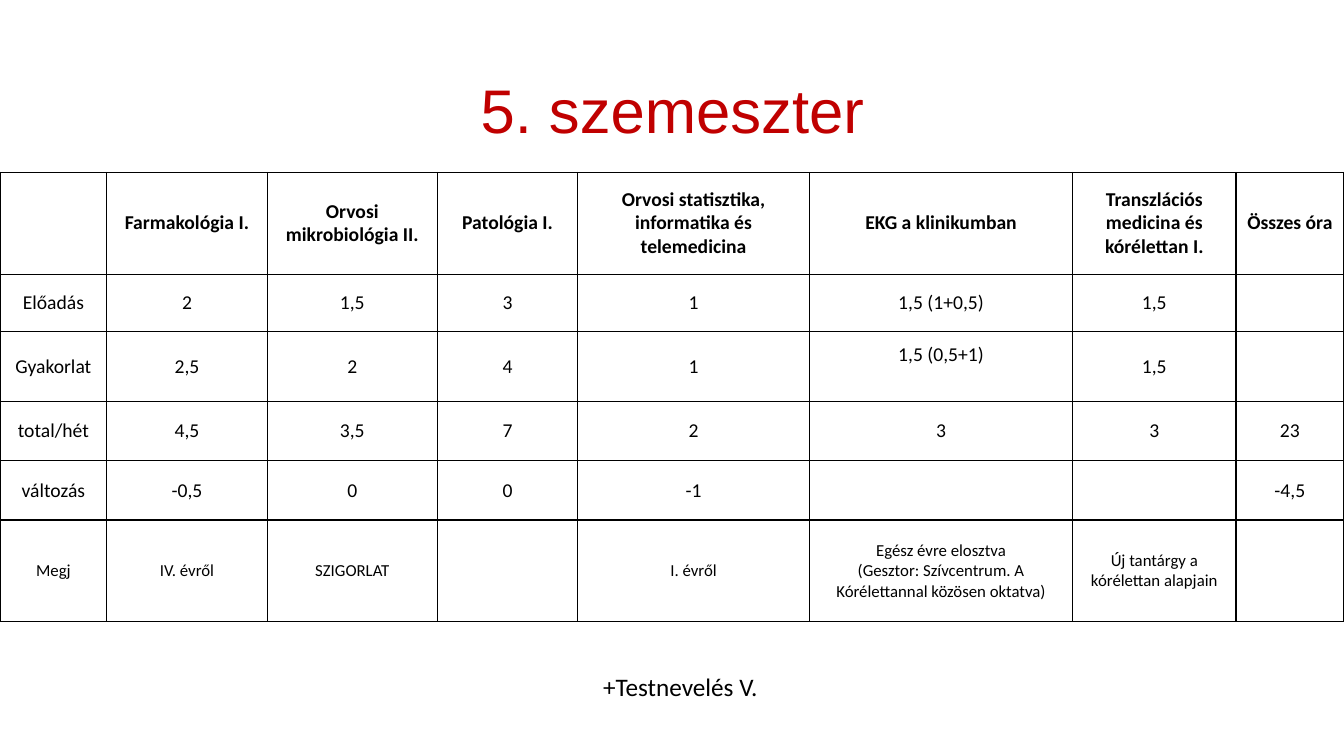
from lxml.etree import SubElement
from pptx import Presentation
from pptx.dml.color import RGBColor
from pptx.enum.text import MSO_ANCHOR, MSO_AUTO_SIZE, PP_ALIGN
from pptx.oxml.ns import qn
from pptx.util import Inches, Pt

TITLE = "5. szemeszter"
FOOTNOTE = "+Testnevelés V. "
ROWS = [
    ["", "Farmakológia I.", "Orvosi mikrobiológia II.", "Patológia I.",
     "Orvosi statisztika, informatika és telemedicina", "EKG a klinikumban",
     "Transzlációs medicina és kórélettan I.", "Összes óra"],
    ["Előadás", "2", "1,5", "3", "1", "1,5 (1+0,5)", "1,5", ""],
    ["Gyakorlat", "2,5", "2", "4", "1", "1,5 (0,5+1)", "1,5", ""],
    ["total/hét", "4,5", "3,5", "7", "2", "3", "3", "23"],
    ["változás", "-0,5", "0", "0", "-1", "", "", "-4,5"],
    ["Megj", "IV. évről", "SZIGORLAT", "", "I. évről",
     "Egész évre elosztva\n(Gesztor: Szívcentrum. A Kórélettannal közösen oktatva)",
     "Új tantárgy a kórélettan alapjain", ""],
]
COLUMN_WIDTHS = [1.06, 1.59, 1.69, 1.39, 2.3, 2.61, 1.62, 1.07]
ROW_HEIGHTS = [1.01, 0.57, 0.69, 0.59, 0.59, 1.01]
RAISED_CELL = (2, 5)
BLACK = "000000"
RED = "C00000"


def color(value):
    return RGBColor.from_string(value)


def format_text(text_frame, size, font_name="Calibri", font_color=BLACK, bold=False):
    for paragraph in text_frame.paragraphs:
        paragraph.alignment = PP_ALIGN.CENTER
        paragraph.font.name = font_name
        paragraph.font.size = Pt(size)
        paragraph.font.bold = bold
        paragraph.font.color.rgb = color(font_color)


def add_borders(cell):
    properties = cell._tc.get_or_add_tcPr()
    for side in ("a:lnL", "a:lnR", "a:lnT", "a:lnB"):
        line = SubElement(properties, qn(side), w=str(Pt(1)))
        fill = SubElement(line, qn("a:solidFill"))
        SubElement(fill, qn("a:srgbClr"), val=BLACK)


def add_title(slide):
    title = slide.shapes.title
    title.left, title.top = Inches(0.92), Inches(0.4)
    title.width, title.height = Inches(11.5), Inches(1.45)
    text_frame = title.text_frame
    text_frame.text = TITLE
    text_frame.auto_size = MSO_AUTO_SIZE.NONE
    text_frame.vertical_anchor = MSO_ANCHOR.MIDDLE
    format_text(text_frame, 44, "Arial", RED)
    text_frame.paragraphs[0].line_spacing = 0.9


def add_timetable(slide):
    table = slide.shapes.add_table(
        len(ROWS), len(COLUMN_WIDTHS), Inches(0), Inches(1.71),
        Inches(sum(COLUMN_WIDTHS)), Inches(sum(ROW_HEIGHTS))).table
    table.first_row = table.horz_banding = False
    for column, width in zip(table.columns, COLUMN_WIDTHS):
        column.width = Inches(width)
    for row_index, texts in enumerate(ROWS):
        table.rows[row_index].height = Inches(ROW_HEIGHTS[row_index])
        size = 12 if row_index == len(ROWS) - 1 else 14
        for column_index, text in enumerate(texts):
            cell = table.cell(row_index, column_index)
            cell.text = text
            cell.vertical_anchor = MSO_ANCHOR.MIDDLE
            cell.margin_left = cell.margin_right = Inches(0.07)
            cell.margin_top = cell.margin_bottom = 0
            add_borders(cell)
            cell.fill.background()
            format_text(cell.text_frame, size, bold=row_index == 0)
    table.cell(*RAISED_CELL).margin_bottom = Inches(0.23)


def add_footnote(slide):
    box = slide.shapes.add_textbox(Inches(5.22), Inches(6.61), Inches(3.11), Inches(0.4))
    text_frame = box.text_frame
    text_frame.word_wrap = True
    text_frame.auto_size = MSO_AUTO_SIZE.SHAPE_TO_FIT_TEXT
    text_frame.text = FOOTNOTE
    format_text(text_frame, 18)


def main():
    presentation = Presentation()
    presentation.slide_width = Inches(13.33)
    presentation.slide_height = Inches(7.5)
    slide = presentation.slides.add_slide(presentation.slide_layouts[5])
    add_title(slide)
    add_timetable(slide)
    add_footnote(slide)
    presentation.save("out.pptx")


if __name__ == "__main__":
    main()
